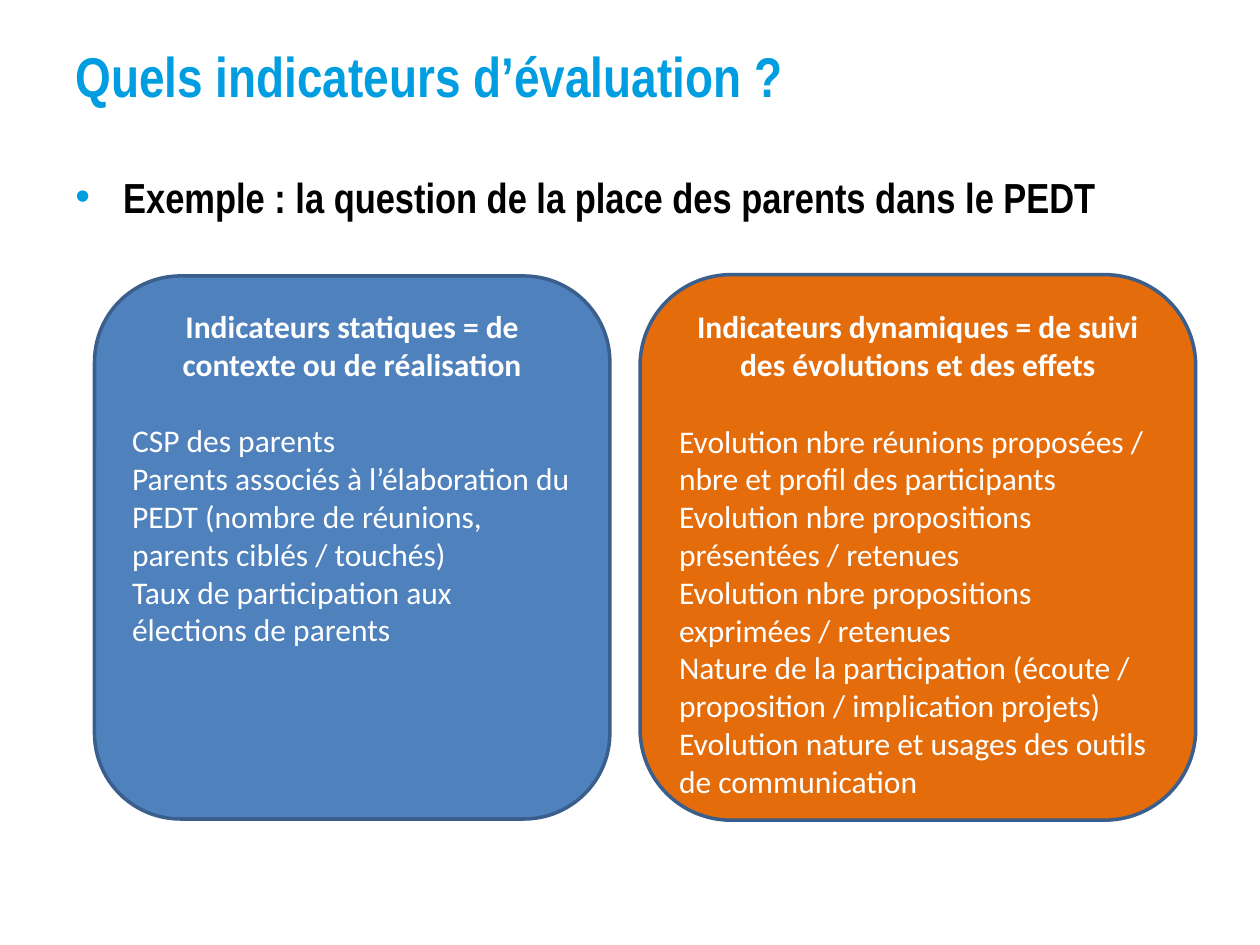
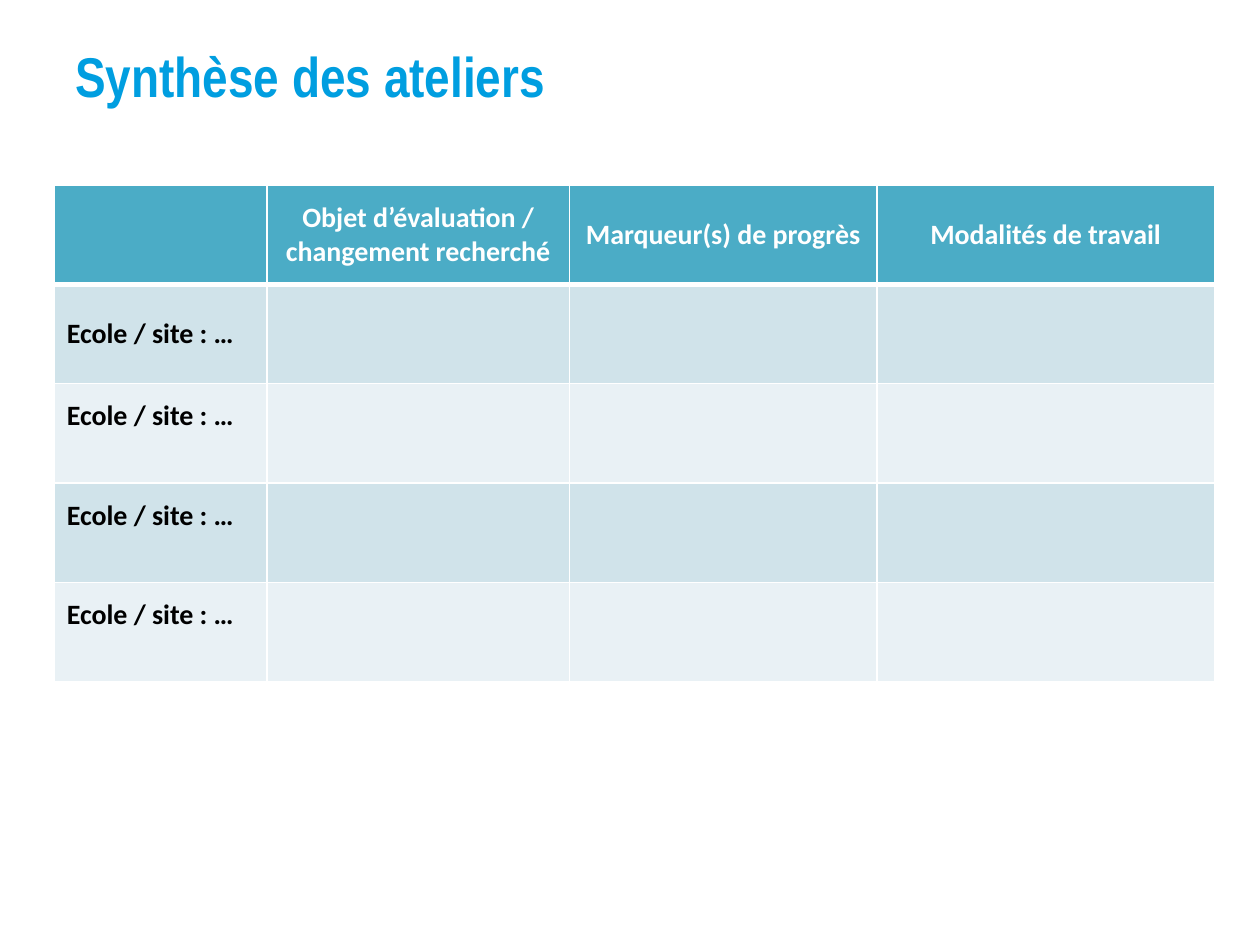
from dataclasses import dataclass
from typing import Optional

from lxml.etree import Element, SubElement
from pptx import Presentation
from pptx.dml.color import RGBColor
from pptx.enum.shapes import MSO_SHAPE
from pptx.enum.text import MSO_ANCHOR, PP_ALIGN
from pptx.oxml.ns import qn
from pptx.util import Inches, Pt


@dataclass(frozen=True)
class Theme:
    accent: str = "009EE0"
    black: str = "000000"
    white: str = "FFFFFF"
    blue: str = "4F81BD"
    orange: str = "E46C0A"
    outline: str = "3A5F8C"
    table_header: str = "4BACC6"
    bands: tuple[str, str] = ("D0E3EA", "E9F1F5")
    title_font: str = "Arial Narrow"
    body_font: str = "Calibri"
    title_size: int = 32
    bullet_size: int = 24
    panel_size: int = 18
    table_size: int = 16


THEME = Theme()


@dataclass(frozen=True)
class Box:
    left: float
    top: float
    width: float
    height: float

    def lengths(self) -> tuple:
        return tuple(Inches(value) for value in (self.left, self.top, self.width, self.height))


@dataclass(frozen=True)
class Panel:
    box: Box
    color: str
    heading: str
    indicators: tuple[str, ...]


TITLE_BOX = Box(0.5, -0.03, 9, 1.25)
BULLET_BOX = Box(0.5, 1.31, 9, 5.39)
TABLE_BOX = Box(0.43, 1.47, 9.21, 3.94)
COLUMN_WIDTHS = (1.69, 2.4, 2.44, 2.68)
HEADERS = (
    "",
    "Objet d’évaluation / changement recherché",
    "Marqueur(s) de progrès",
    "Modalités de travail",
)
SITE_LABEL = "Ecole / site : …"
SITE_COUNT = 4

PANELS = (
    Panel(
        Box(0.75, 2.19, 4.09, 4.31),
        THEME.blue,
        "Indicateurs statiques = de contexte ou de réalisation",
        (
            "CSP des parents",
            "Parents associés à l’élaboration du PEDT (nombre de réunions, parents ciblés / touchés)",
            "Taux de participation aux élections de parents",
        ),
    ),
    Panel(
        Box(5.08, 2.18, 4.41, 4.33),
        THEME.orange,
        "Indicateurs dynamiques = de suivi des évolutions et des effets",
        (
            "Evolution nbre réunions proposées / nbre et profil des participants",
            "Evolution nbre propositions présentées / retenues",
            "Evolution nbre propositions exprimées / retenues",
            "Nature de la participation (écoute / proposition / implication projets)",
            "Evolution nature et usages des outils de communication",
        ),
    ),
)


def add_run(paragraph, text: str, font_name: str, size: int, color: str, bold: bool = True) -> None:
    run = paragraph.add_run()
    run.text = text
    run.font.name = font_name
    run.font.size = Pt(size)
    run.font.bold = bold
    run.font.color.rgb = RGBColor.from_string(color)


def set_fill(target, color: str) -> None:
    target.fill.solid()
    target.fill.fore_color.rgb = RGBColor.from_string(color)


def add_text_frame(slide, box: Box):
    frame = slide.shapes.add_textbox(*box.lengths()).text_frame
    frame.word_wrap = True
    return frame


def add_titled_slide(presentation, title: str):
    slide = presentation.slides.add_slide(presentation.slide_layouts[6])
    frame = add_text_frame(slide, TITLE_BOX)
    frame.vertical_anchor = MSO_ANCHOR.MIDDLE
    add_run(frame.paragraphs[0], title, THEME.title_font, THEME.title_size, THEME.accent)
    return slide


def add_bullet(slide, text: str) -> None:
    paragraph = add_text_frame(slide, BULLET_BOX).paragraphs[0]
    properties = paragraph._p.get_or_add_pPr()
    properties.set("marL", str(Inches(0.38)))
    properties.set("indent", str(Inches(-0.38)))
    bullet_color = SubElement(properties, qn("a:buClr"))
    SubElement(bullet_color, qn("a:srgbClr"), val=THEME.accent)
    SubElement(properties, qn("a:buFont"), typeface="Arial")
    SubElement(properties, qn("a:buChar"), char="•")
    add_run(paragraph, text, THEME.title_font, THEME.bullet_size, THEME.black)


def add_panel(slide, panel: Panel) -> None:
    shape = slide.shapes.add_shape(MSO_SHAPE.ROUNDED_RECTANGLE, *panel.box.lengths())
    shape.shadow.inherit = False
    set_fill(shape, panel.color)
    shape.line.color.rgb = RGBColor.from_string(THEME.outline)
    shape.line.width = Pt(2)
    frame = shape.text_frame
    frame.word_wrap = True
    frame.vertical_anchor = MSO_ANCHOR.TOP
    heading = frame.paragraphs[0]
    heading.alignment = PP_ALIGN.CENTER
    heading.space_after = Pt(22)
    add_run(heading, panel.heading, THEME.body_font, THEME.panel_size, THEME.white)
    for indicator in panel.indicators:
        paragraph = frame.add_paragraph()
        paragraph.alignment = PP_ALIGN.LEFT
        add_run(paragraph, indicator, THEME.body_font, THEME.panel_size, THEME.white, bold=False)


def set_borders(cell, top: float, bottom: float) -> None:
    properties = cell._tc.get_or_add_tcPr()
    widths = {"a:lnL": 1, "a:lnR": 1, "a:lnT": top, "a:lnB": bottom}
    for position, (tag, width) in enumerate(widths.items()):
        line = Element(qn(tag), w=str(Pt(width)))
        SubElement(SubElement(line, qn("a:solidFill")), qn("a:srgbClr"), val=THEME.white)
        properties.insert(position, line)


def format_cell(cell, text: str, fill: str, color: str, alignment: Optional[PP_ALIGN] = None) -> None:
    set_fill(cell, fill)
    cell.vertical_anchor = MSO_ANCHOR.MIDDLE
    if text:
        paragraph = cell.text_frame.paragraphs[0]
        paragraph.alignment = alignment
        add_run(paragraph, text, THEME.body_font, THEME.table_size, color)


def add_workshop_table(slide) -> None:
    table = slide.shapes.add_table(SITE_COUNT + 1, len(HEADERS), *TABLE_BOX.lengths()).table
    for column, width in zip(table.columns, COLUMN_WIDTHS):
        column.width = Inches(width)
    for column_index, header in enumerate(HEADERS):
        cell = table.cell(0, column_index)
        format_cell(cell, header, THEME.table_header, THEME.white, PP_ALIGN.CENTER)
        set_borders(cell, top=1, bottom=3)
        for row_index in range(1, SITE_COUNT + 1):
            cell = table.cell(row_index, column_index)
            label = SITE_LABEL if column_index == 0 else ""
            format_cell(cell, label, THEME.bands[(row_index - 1) % 2], THEME.black)
            set_borders(cell, top=3 if row_index == 1 else 1, bottom=1)
            if label and row_index > 1:
                cell.margin_bottom = Inches(0.32)


def main() -> None:
    presentation = Presentation()
    presentation.slide_width = Inches(10)
    presentation.slide_height = Inches(7.5)

    indicators_slide = add_titled_slide(presentation, "Quels indicateurs d’évaluation ?")
    add_bullet(indicators_slide, "Exemple : la question de la place des parents dans le PEDT")
    for panel in PANELS:
        add_panel(indicators_slide, panel)

    summary_slide = add_titled_slide(presentation, "Synthèse des ateliers")
    add_workshop_table(summary_slide)

    presentation.save("out.pptx")


if __name__ == "__main__":
    main()
